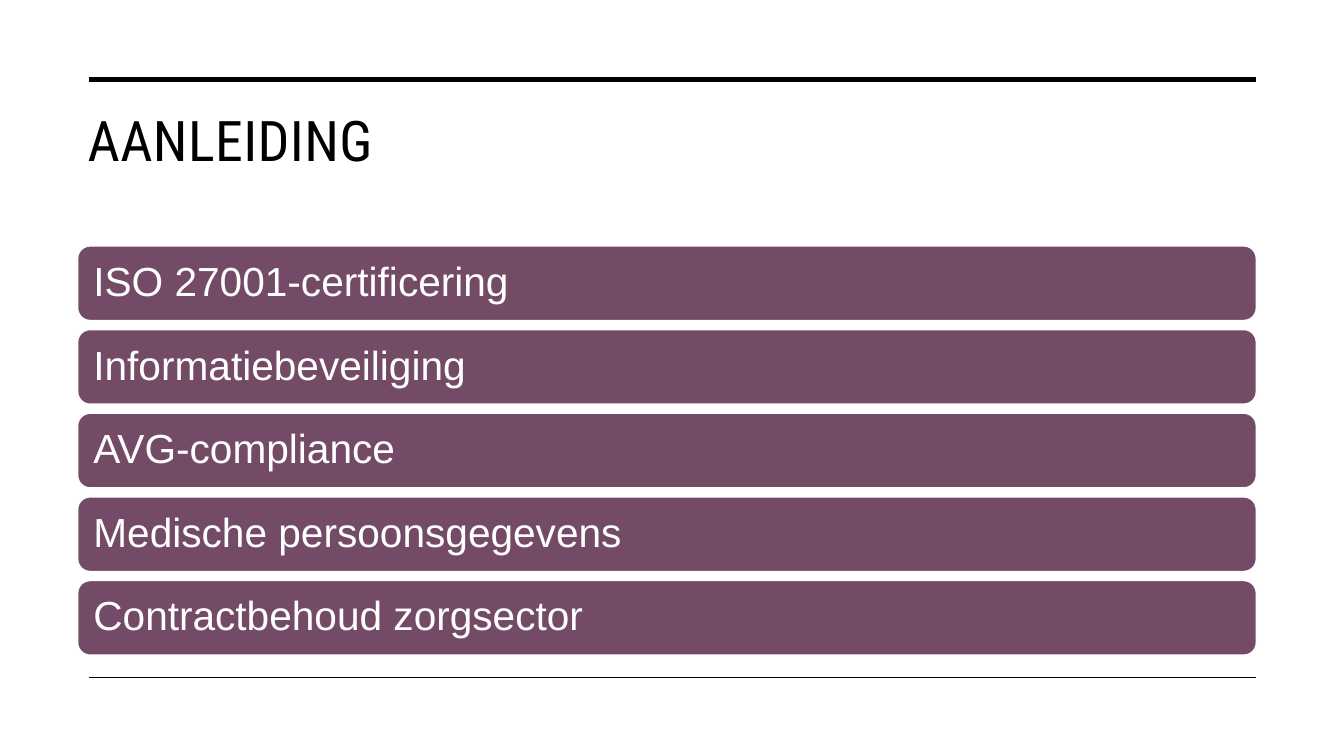
import pptx
import pptx.dml.color
import pptx.enum.shapes
import pptx.enum.text
import pptx.oxml
import pptx.oxml.ns
import pptx.util
from pptx.util import Inches


def rgb(value):
    return pptx.dml.color.RGBColor.from_string(value)


class SlideBuilder:
    ink = "000000"
    paper = "FFFFFF"
    bar_fill = "734B67"
    title_font = "Roboto Condensed"
    body_font = "Arial"

    def __init__(self, prs):
        self.slide = prs.slides.add_slide(prs.slide_layouts[5])
        self.slide.background.fill.solid()
        self.slide.background.fill.fore_color.rgb = rgb(self.paper)

    def style(self, p, font, size, color):
        p.alignment = pptx.enum.text.PP_ALIGN.LEFT
        p.font.name = font
        p.font.size = pptx.util.Pt(size)
        p.font.color.rgb = rgb(color)

    def title(self, text, left, top, width, height):
        sp = self.slide.shapes.title
        sp.left, sp.top = Inches(left), Inches(top)
        sp.width, sp.height = Inches(width), Inches(height)
        tf = sp.text_frame
        tf.text = text
        tf.word_wrap = True
        tf.auto_size = pptx.enum.text.MSO_AUTO_SIZE.NONE
        tf.vertical_anchor = pptx.enum.text.MSO_ANCHOR.TOP
        p = tf.paragraphs[0]
        self.style(p, self.title_font, 40, self.ink)
        p.runs[0].font._element.set("spc", "30")

    def rule(self, left, right, y, weight):
        line = self.slide.shapes.add_connector(
            pptx.enum.shapes.MSO_CONNECTOR.STRAIGHT,
            Inches(left), Inches(y), Inches(right), Inches(y))
        line.line.color.rgb = rgb(self.ink)
        line.line.width = pptx.util.Pt(weight)
        effects = pptx.oxml.parse_xml(
            "<a:effectLst %s/>" % pptx.oxml.ns.nsdecls("a"))
        line._element.spPr.append(effects)

    def bar(self, text, left, top, width, height):
        sp = self.slide.shapes.add_shape(
            pptx.enum.shapes.MSO_SHAPE.ROUNDED_RECTANGLE,
            Inches(left), Inches(top), Inches(width), Inches(height))
        sp.shadow.inherit = False
        sp.fill.solid()
        sp.fill.fore_color.rgb = rgb(self.bar_fill)
        sp.line.color.rgb = rgb(self.paper)
        sp.line.width = pptx.util.Pt(1)
        tf = sp.text_frame
        tf.word_wrap = True
        tf.vertical_anchor = pptx.enum.text.MSO_ANCHOR.MIDDLE
        tf.margin_left = tf.margin_right = Inches(0.12)
        tf.margin_top = tf.margin_bottom = Inches(0.12)
        p = tf.paragraphs[0]
        p.text = text
        p.line_spacing = 0.9
        self.style(p, self.body_font, 29, self.paper)


def main():
    prs = pptx.Presentation()
    prs.slide_width, prs.slide_height = Inches(13.33), Inches(7.5)
    s = SlideBuilder(prs)
    left, width = 0.77, 11.69
    s.rule(0.88, 12.46, 0.79, 3.5)
    s.rule(0.88, 12.46, 6.72, 1)
    s.title("AANLEIDING", left, 1, width, 1.43)

    reasons = [
        "ISO 27001-certificering",
        "Informatiebeveiliging",
        "AVG-compliance",
        "Medische persoonsgegevens",
        "Contractbehoud zorgsector",
    ]
    first_top, pitch, bar_height = 2.44, 0.83, 0.74
    for i, reason in enumerate(reasons):
        s.bar(reason, left, first_top + i * pitch, width, bar_height)

    prs.save("out.pptx")


if __name__ == "__main__":
    main()
